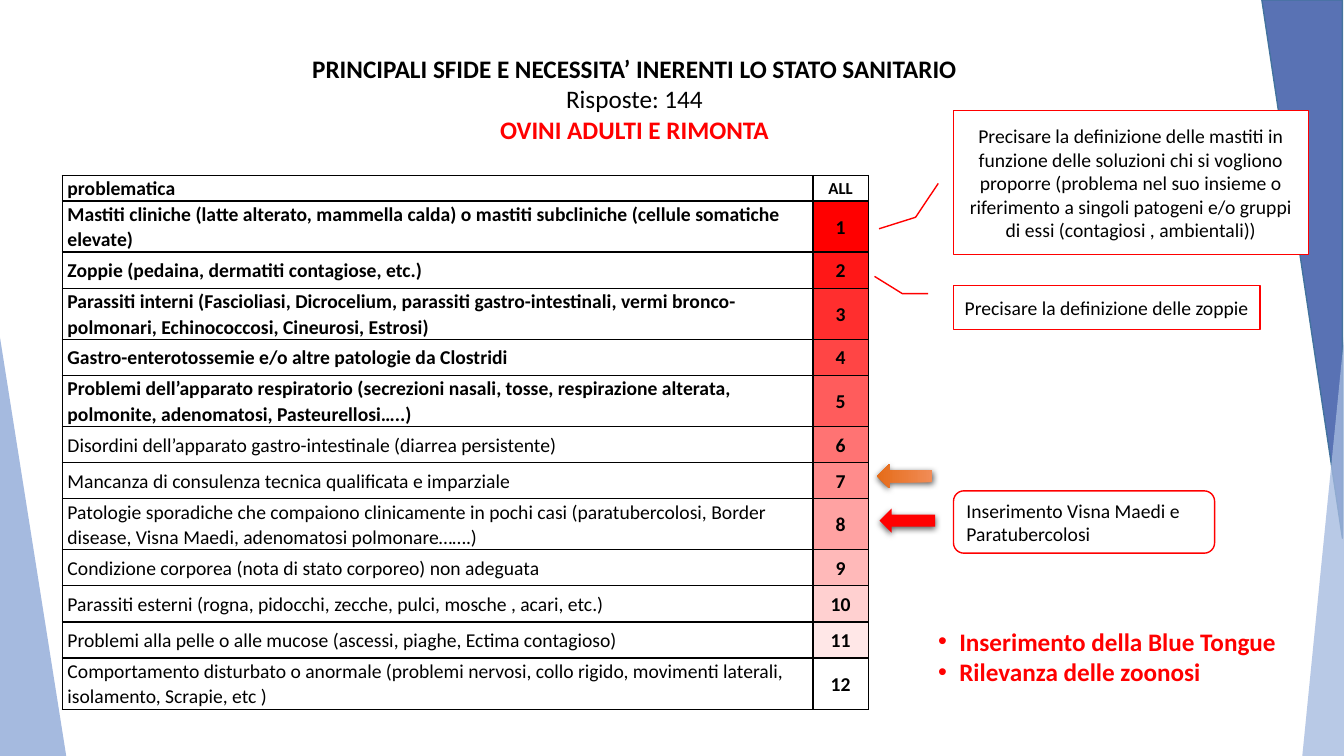
"""Build the slide on the main health challenges of adult sheep and replacements."""
from collections import namedtuple

from lxml import etree
from pptx import Presentation
from pptx import util as u
from pptx.dml.color import RGBColor
from pptx.enum import shapes, text
from pptx.oxml.ns import qn

Theme = namedtuple("Theme", "font black white red pale deep edge glow dusk head body small")
theme = Theme("Calibri", "000000", "FFFFFF", "FF0000", "A5BADF", "5972B4", "43739E",
              "F18C57", "E56C19", u.Pt(18), u.Pt(14), u.Pt(12))
kind = shapes.MSO_SHAPE
mid, left = text.PP_ALIGN.CENTER, text.PP_ALIGN.LEFT


def write(para, words, size, bold=False, tint=theme.black):
    run = para.add_run()
    run.text = words
    for name, value in dict(name=theme.font, size=size, bold=bold).items():
        setattr(run.font, name, value)
    run.font.color.rgb = RGBColor.from_string(tint)


def draw(form, box, fill, line=None, adjust=()):
    shape = slide.shapes.add_shape(form, *map(u.Cm, box))
    shape.shadow.inherit = False
    shape.fill.solid()
    shape.fill.fore_color.rgb = RGBColor.from_string(fill)
    if line:
        shape.line.color.rgb = RGBColor.from_string(line)
        shape.line.width = u.Pt(1)
    else:
        shape.line.fill.background()
    for spot, value in enumerate(adjust):
        shape.adjustments[spot] = value
    return shape


deck = Presentation()
deck.slide_width, deck.slide_height = u.Cm(33.87), u.Cm(19.05)
slide = deck.slides.add_slide(deck.slide_layouts[1])

draw(kind.ISOSCELES_TRIANGLE, (-0.03, 8.31, 1.7, 10.74), theme.pale, adjust=[0])
wedge = draw(kind.ISOSCELES_TRIANGLE, (31.8, 0, 2.03, 13.56), theme.deep, theme.edge, [0])
wedge.rotation = 180
veil = draw(kind.ISOSCELES_TRIANGLE, (32.82, 8.31, 1.07, 10.74), theme.pale, adjust=[1])
etree.SubElement(veil.element.find(".//" + qn("a:srgbClr")), qn("a:alpha"), val="78000")

title, body = slide.shapes.title, slide.placeholders[1]
for holder, box in ((title, (7.52, 1.22, 16.94, 2.57)), (body, (23.39, 15.65, 9.27, 1.8))):
    for name, value in zip(("left", "top", "width", "height"), box):
        setattr(holder, name, u.Cm(value))
    frame = dict(word_wrap=True, auto_size=text.MSO_AUTO_SIZE.NONE,
                 vertical_anchor=text.MSO_ANCHOR.TOP)
    for name, value in frame.items():
        setattr(holder.text_frame, name, value)

para = title.text_frame.paragraphs[0]
para.alignment = mid
write(para, "PRINCIPALI SFIDE E NECESSITA’ INERENTI LO STATO SANITARIO", theme.head, True)
write(para, " Risposte: 144", theme.head)
para = title.text_frame.add_paragraph()
para.alignment = mid
write(para, "OVINI ADULTI E RIMONTA", theme.head, True, theme.red)

points = ["Inserimento della Blue Tongue", "Rilevanza delle zoonosi"]
for rank, words in enumerate(points):
    para = body.text_frame.add_paragraph() if rank else body.text_frame.paragraphs[0]
    para.space_before = u.Pt(0)
    props = para._p.get_or_add_pPr()
    props.set("marL", str(u.Cm(0.53)))
    props.set("indent", str(u.Cm(-0.53)))
    etree.SubElement(props, qn("a:buFont"), typeface="Arial")
    etree.SubElement(props, qn("a:buChar"), char="•")
    write(para, words, theme.head, True, theme.red)

one, two = 0.91, 1.27
issues = [
    ("Mastiti cliniche (latte alterato, mammella calda) o mastiti subcliniche "
     "(cellule somatiche elevate)", two),
    ("Zoppie (pedaina, dermatiti contagiose, etc.)", one),
    ("Parassiti interni (Fascioliasi, Dicrocelium, parassiti gastro-intestinali, "
     "vermi bronco-polmonari, Echinococcosi, Cineurosi, Estrosi)", two),
    ("Gastro-enterotossemie e/o altre patologie da Clostridi", one),
    ("Problemi dell’apparato respiratorio (secrezioni nasali, tosse, respirazione "
     "alterata, polmonite, adenomatosi, Pasteurellosi…..)", two),
    ("Disordini dell’apparato gastro-intestinale (diarrea persistente)", one),
    ("Mancanza di consulenza tecnica qualificata e imparziale", one),
    ("Patologie sporadiche che compaiono clinicamente in pochi casi (paratubercolosi, "
     "Border disease, Visna Maedi, adenomatosi polmonare…….)", two),
    ("Condizione corporea (nota di stato corporeo) non adeguata", one),
    ("Parassiti esterni (rogna, pidocchi, zecche, pulci, mosche , acari, etc.)", one),
    ("Problemi alla pelle o alle mucose (ascessi, piaghe, Ectima contagioso)", one),
    ("Comportamento disturbato o anormale (problemi nervosi, collo rigido, "
     "movimenti laterali, isolamento, Scrapie, etc )", two),
]
rows = [("problematica", "ALL", 0.63)]
rows += [(words, str(rank), tall) for rank, (words, tall) in enumerate(issues, 1)]
wide = (18.92, 1.39)
total = sum(row[2] for row in rows)
grid = slide.shapes.add_table(len(rows), 2, u.Cm(1.57), u.Cm(4.42),
                              u.Cm(sum(wide)), u.Cm(total)).table
grid.first_row = grid.horz_banding = False
for col, width in zip(grid.columns, wide):
    col.width = u.Cm(width)

for rank, (words, mark, tall) in enumerate(rows):
    grid.rows[rank].height = u.Cm(tall)
    for side, label in enumerate((words, mark)):
        cell = grid.cell(rank, side)
        anchor = text.MSO_ANCHOR.MIDDLE if rank or side else text.MSO_ANCHOR.BOTTOM
        look = dict(margin_left=u.Cm(0.13), margin_right=u.Cm(0.13), margin_top=0,
                    margin_bottom=0, vertical_anchor=anchor)
        for name, value in look.items():
            setattr(cell, name, value)
        for edge in ("lnL", "lnR", "lnT", "lnB"):
            rule = etree.SubElement(cell._tc.get_or_add_tcPr(), qn("a:" + edge), w="12700")
            ink = etree.SubElement(rule, qn("a:solidFill"))
            etree.SubElement(ink, qn("a:srgbClr"), val=theme.black)
        if rank and side:
            fade = 255 * (rank - 1) // (len(issues) - 1)
            cell.fill.solid()
            cell.fill.fore_color.rgb = RGBColor(255, fade, fade)
        else:
            cell.fill.background()
        para = cell.text_frame.paragraphs[0]
        para.line_spacing = 1.07
        para.alignment = mid if side else left
        size = theme.small if side and not rank else theme.body
        write(para, label, size, bool(side) or rank < 6)

notes = [
    (kind.LINE_CALLOUT_2, (24.03, 2.79, 8.94, 3.63), mid,
     (0.505, -0.043, 0.74, -0.107, 0.82, -0.21),
     "Precisare la definizione delle mastiti in funzione delle soluzioni chi si vogliono "
     "proporre (problema nel suo insieme o riferimento a singoli patogeni e/o gruppi di "
     "essi (contagiosi , ambientali))"),
    (kind.LINE_CALLOUT_2, (24.03, 7.19, 7.72, 1.12), mid,
     (0.188, -0.083, 0.188, -0.167, -0.201, -0.258),
     "Precisare la definizione delle zoppie"),
    (kind.ROUNDED_RECTANGLE, (24.03, 12.37, 6.58, 1.57), left, (),
     "Inserimento Visna Maedi e Paratubercolosi"),
]
for form, box, align, adjust, words in notes:
    note = draw(form, box, theme.white, theme.red, adjust)
    note.text_frame.word_wrap = True
    note.text_frame.vertical_anchor = text.MSO_ANCHOR.MIDDLE
    para = note.text_frame.paragraphs[0]
    para.alignment = align
    write(para, words, theme.body)

for box, fill in (((22.56, 12.42, 0.61, 1.4), theme.red), ((22.5, 11.3, 0.61, 1.4), theme.dusk)):
    arrow = draw(kind.DOWN_ARROW, box, fill)
    arrow.rotation = 90
    if fill == theme.dusk:
        arrow.fill.gradient()
        arrow.fill.gradient_angle = 270
        for stop, tint in zip(arrow.fill.gradient_stops, (theme.glow, theme.dusk)):
            stop.color.rgb = RGBColor.from_string(tint)
    shade = etree.SubElement(arrow.element.spPr.find(qn("a:effectLst")), qn("a:outerShdw"),
                             blurRad=str(u.Pt(4.5)), dist=str(u.Pt(1.5)), dir="5400000",
                             rotWithShape="0")
    tone = etree.SubElement(shade, qn("a:srgbClr"), val=theme.black)
    etree.SubElement(tone, qn("a:alpha"), val="63000")

deck.save("out.pptx")
